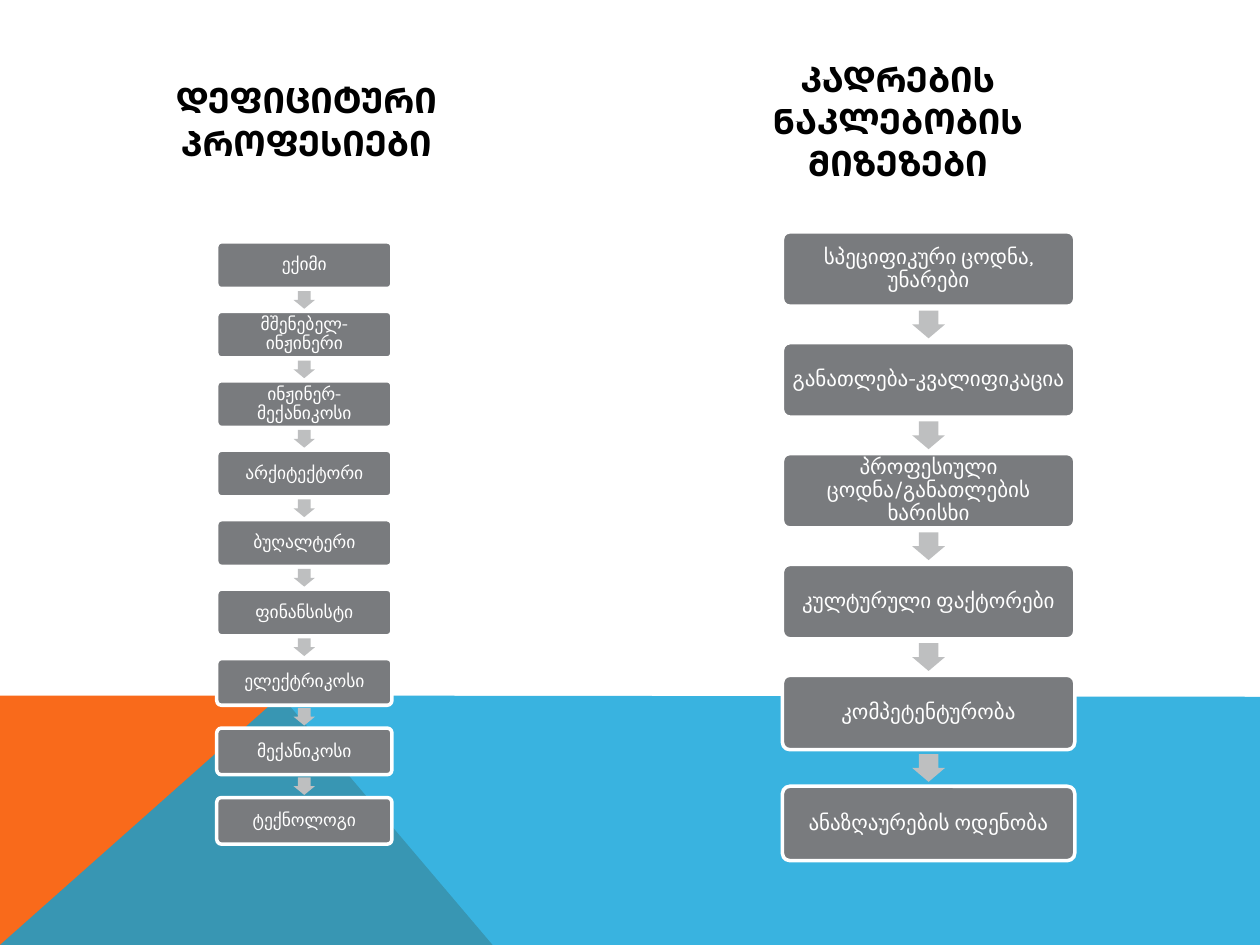
from dataclasses import dataclass

from lxml import etree
from pptx import Presentation
from pptx.dml.color import RGBColor
from pptx.enum.shapes import MSO_SHAPE
from pptx.enum.text import MSO_ANCHOR, PP_ALIGN
from pptx.oxml.ns import qn
from pptx.util import Inches, Pt

ROUND_RECT = MSO_SHAPE.ROUNDED_RECTANGLE
DOWN_ARROW = MSO_SHAPE.DOWN_ARROW
MIDDLE = MSO_ANCHOR.MIDDLE
CENTER = PP_ALIGN.CENTER


@dataclass(frozen=True)
class Theme:
    font: str = "Karla"
    black: RGBColor = RGBColor.from_string("000000")
    white: RGBColor = RGBColor.from_string("FFFFFF")
    orange: RGBColor = RGBColor.from_string("F96A1B")
    blue: RGBColor = RGBColor.from_string("08A1D9")
    box: RGBColor = RGBColor.from_string("797B7E")
    arrow: RGBColor = RGBColor.from_string("BEBFC0")
    heading_size: int = 20
    left_size: int = 10
    right_size: int = 12


theme = Theme()


def write_text(shape, text, size, color, bold=False, inset=None):
    tf = shape.text_frame
    tf.word_wrap = True
    tf.vertical_anchor = MIDDLE
    if inset is not None:
        tf.margin_left = tf.margin_right = Inches(inset)
        tf.margin_top = tf.margin_bottom = Inches(inset)
    p = tf.paragraphs[0]
    p.alignment = CENTER
    r = p.add_run()
    r.text = text
    r.font.name = theme.font
    r.font.size = Pt(size)
    r.font.bold = bold
    r.font.color.rgb = color
    return p


def add_block(s, kind, left, top, width, height, color):
    sp = s.shapes.add_shape(kind, Inches(left), Inches(top), Inches(width), Inches(height))
    sp.shadow.inherit = False
    sp.fill.solid()
    sp.fill.fore_color.rgb = color
    sp.line.fill.background()
    return sp


prs = Presentation()
prs.slide_width = Inches(10)
prs.slide_height = Inches(7.5)
s = prs.slides.add_slide(prs.slide_layouts[5])

# Coloured bands along the bottom
bands = [
    ([(0, 7.5), (0, 5.52), (2.23, 5.52), (3.91, 7.5)], theme.orange, None),
    ([(0, 7.5), (2.23, 5.52), (10, 5.53), (10, 7.5)], theme.blue, 80),
]
for points, color, opacity in bands:
    corners = [(Inches(x), Inches(y)) for x, y in points]
    builder = s.shapes.build_freeform(*corners[0])
    builder.add_line_segments(corners[1:], close=True)
    sp = builder.convert_to_shape()
    sp.shadow.inherit = False
    sp.fill.solid()
    sp.fill.fore_color.rgb = color
    sp.line.fill.background()
    if opacity is not None:
        srgb = sp.element.spPr.find(qn("a:solidFill")).find(qn("a:srgbClr"))
        etree.SubElement(srgb, qn("a:alpha")).set("val", str(opacity * 1000))

# Headings
title = s.shapes.title
title.left, title.top = Inches(0.83), Inches(0.39)
title.width, title.height = Inches(3.2), Inches(1.14)
write_text(title, "ᲓᲔᲤᲘᲪᲘᲢᲣᲠᲘ ᲞᲠᲝᲤᲔᲡᲘᲔᲑᲘ", theme.heading_size, theme.black, bold=True)

heading = s.shapes.add_textbox(Inches(5.5), Inches(0.5), Inches(3.25), Inches(0.92))
write_text(heading, "ᲙᲐᲓᲠᲔᲑᲘᲡ ᲜᲐᲙᲚᲔᲑᲝᲑᲘᲡ ᲛᲘᲖᲔᲖᲔᲑᲘ", theme.heading_size, theme.black, bold=True)

# Flow columns: left, first top, last top, box size, arrow size, inset, type size, labels
columns = [
    (1.72, 1.92, 6.33, (1.39, 0.37), (0.17, 0.14), 0.04, theme.left_size, [
        "ექიმი", "მშენებელ-ინჟინერი", "ინჟინერ-მექანიკოსი",
        "არქიტექტორი", "ბუღალტერი", "ფინანსისტი",
        "ელექტრიკოსი", "მექანიკოსი", "ტექნოლოგი",
    ]),
    (6.21, 1.84, 6.24, (2.32, 0.59), (0.26, 0.22), 0.05, theme.right_size, [
        "სპეციფიკური ცოდნა, უნარები", "განათლება-კვალიფიკაცია",
        "პროფესიული ცოდნა/განათლების ხარისხი", "კულტურული ფაქტორები",
        "კომპეტენტურობა", "ანაზღაურების ოდენობა",
    ]),
]
for left, first, last, (box_w, box_h), (arrow_w, arrow_h), inset, size, labels in columns:
    step = (last - first) / (len(labels) - 1)
    for i, label in enumerate(labels):
        top = first + i * step
        box = add_block(s, ROUND_RECT, left, top, box_w, box_h, theme.box)
        box.adjustments[0] = 0.1
        box.line.color.rgb = theme.white
        box.line.width = Pt(2)
        p = write_text(box, label, size, theme.white, inset=inset)
        p.line_spacing = 0.9

        # Arrow centred in the gap to the next box
        if i < len(labels) - 1:
            arrow_left = left + (box_w - arrow_w) / 2
            arrow_top = top + (box_h + step - arrow_h) / 2
            arrow = add_block(s, DOWN_ARROW, arrow_left, arrow_top, arrow_w, arrow_h, theme.arrow)
            arrow.adjustments[0] = 0.6
            arrow.adjustments[1] = 0.5

prs.save("out.pptx")
